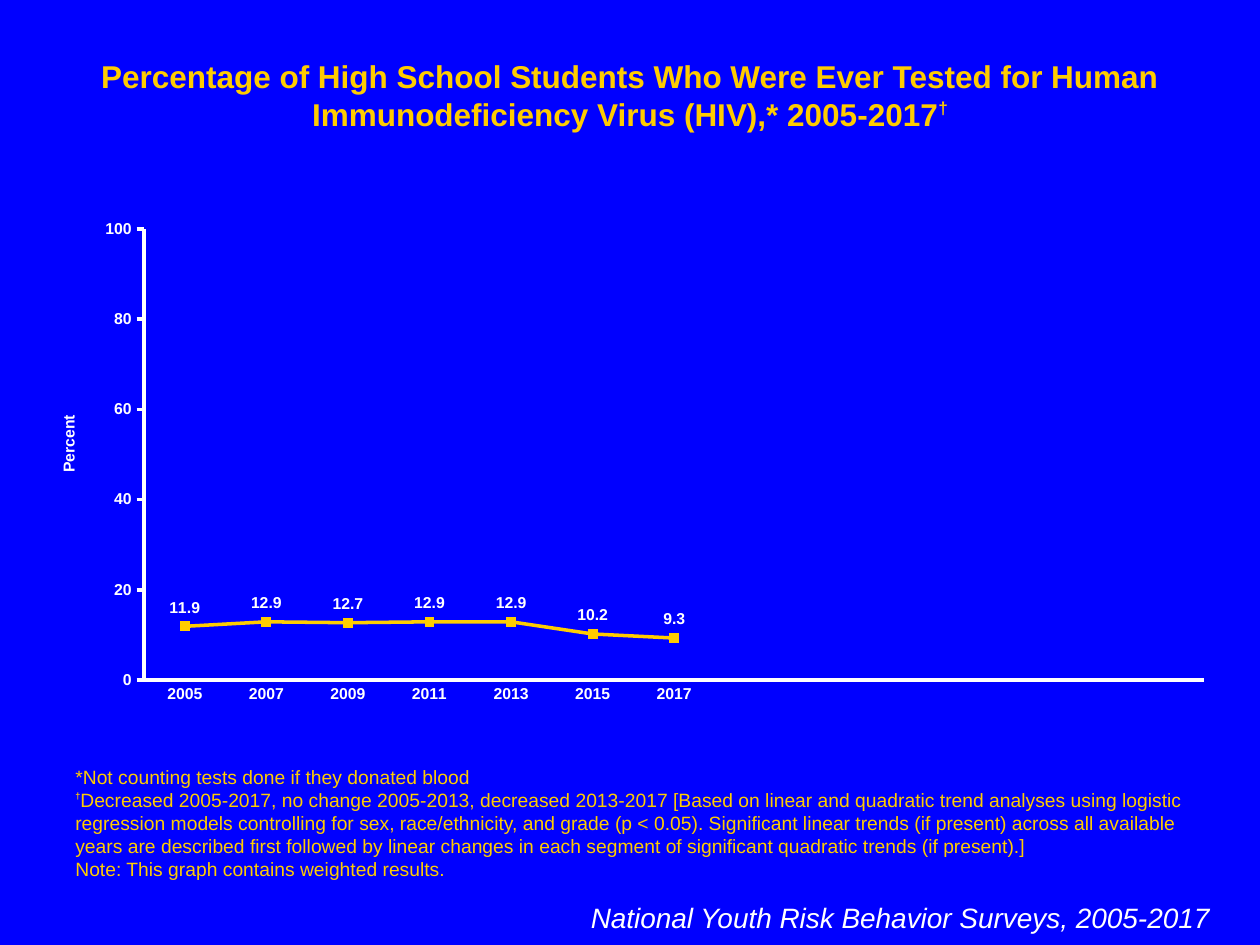
from dataclasses import dataclass

import pptx
import pptx.chart.data
import pptx.dml.color
import pptx.enum.chart
import pptx.enum.text
import pptx.oxml
import pptx.oxml.ns
import pptx.util
from pptx.util import Inches

qn = pptx.oxml.ns.qn
Align = pptx.enum.text.PP_ALIGN
Anchor = pptx.enum.text.MSO_ANCHOR


@dataclass(frozen=True)
class Theme:
    font: str = "Arial"
    blue: str = "0000FF"
    gold: str = "FFCC00"
    white: str = "FFFFFF"
    title: int = 18
    title_mark: int = 17
    note: int = 11
    note_mark: int = 9
    source: int = 16
    chart: int = 9
    line: int = 2


THEME = Theme()
YEARS = [str(year) for year in range(2005, 2018, 2)]
TESTED = [11.9, 12.9, 12.7, 12.9, 12.9, 10.2, 9.3]
SLOTS = 13  # categories on the axis, the last ones left empty


def rgb(value):
    return pptx.dml.color.RGBColor.from_string(value)


def style_font(font, size, color, bold=False, italic=False):
    font.name = THEME.font
    font.size = pptx.util.Pt(size)
    font.color.rgb = rgb(color)
    font.bold = bold
    font.italic = italic


def add_run(paragraph, text, size, color, raised=0, **style):
    """Add a run; raised is the superscript offset in percent."""
    run = paragraph.add_run()
    run.text = text
    style_font(run.font, size, color, **style)
    if raised:
        run.font._element.set("baseline", str(raised * 1000))


def prepare_frame(shape, anchor=Anchor.TOP):
    frame = shape.text_frame
    frame.word_wrap = True
    frame.auto_size = pptx.enum.text.MSO_AUTO_SIZE.SHAPE_TO_FIT_TEXT
    frame.vertical_anchor = anchor
    return frame


def add_title(slide):
    title = slide.shapes.title
    title.left, title.top = Inches(0.5), Inches(0.4)
    title.width, title.height = Inches(9), Inches(0.4)
    heading = prepare_frame(title).paragraphs[0]
    heading.alignment = Align.CENTER
    add_run(heading, "Percentage of High School Students Who Were Ever Tested for Human "
            "Immunodeficiency Virus (HIV),* 2005-2017", THEME.title, THEME.gold, bold=True)
    add_run(heading, "†", THEME.title_mark, THEME.gold, raised=40, bold=True)


def add_footnotes(slide):
    box = slide.shapes.add_textbox(Inches(0.5), Inches(6.75), Inches(9), Inches(0.29))
    frame = prepare_frame(box, Anchor.BOTTOM)
    exclusion, trend, weighting = (
        frame.paragraphs[0], frame.add_paragraph(), frame.add_paragraph())
    add_run(exclusion, "*Not counting tests done if they donated blood", THEME.note, THEME.gold)
    add_run(trend, "†", THEME.note_mark, THEME.gold, raised=50, bold=True)
    add_run(trend, "Decreased 2005-2017, no change 2005-2013, decreased 2013-2017 [Based on "
            "linear and quadratic trend analyses using logistic regression models controlling "
            "for sex, race/ethnicity, and grade (p < 0.05). Significant linear trends (if "
            "present) across all available years are described first followed by linear changes "
            "in each segment of significant quadratic trends (if present).]",
            THEME.note, THEME.gold)
    add_run(weighting, "Note: This graph contains weighted results.", THEME.note, THEME.gold)


def add_source(slide):
    box = slide.shapes.add_textbox(Inches(4.53), Inches(7.1), Inches(5.17), Inches(0.37))
    survey = prepare_frame(box).paragraphs[0]
    survey.alignment = Align.RIGHT
    add_run(survey, "National Youth Risk Behavior Surveys, 2005-2017",
            THEME.source, THEME.white, italic=True)


def place(element, index, target=None, **fractions):
    """Give a chart part a fixed place, as fractions of the chart's size."""
    for old in element.findall(qn("c:layout")):
        element.remove(old)
    layout = pptx.oxml.parse_xml(f"<c:layout {pptx.oxml.ns.nsdecls('c')}><c:manualLayout/></c:layout>")
    settings = {"layoutTarget": target} if target else {}
    settings.update(xMode="edge", yMode="edge", **fractions)
    for tag, value in settings.items():
        child = layout[0].makeelement(qn(f"c:{tag}"), {"val": str(value)})
        layout[0].append(child)
    element.insert(index, layout)


def style_axis(axis, tick):
    axis.has_major_gridlines = False
    axis.major_tick_mark = tick
    axis.minor_tick_mark = pptx.enum.chart.XL_TICK_MARK.NONE
    axis.format.line.color.rgb = rgb(THEME.white)
    axis.format.line.width = pptx.util.Pt(THEME.line)
    style_font(axis.tick_labels.font, THEME.chart, THEME.white, bold=True)


def style_percent_axis(axis):
    style_axis(axis, pptx.enum.chart.XL_TICK_MARK.OUTSIDE)
    axis.minimum_scale, axis.maximum_scale, axis.major_unit = 0, 100, 20
    axis.tick_labels.number_format = "#,##0"
    axis.tick_labels.number_format_is_linked = False
    frame = axis.axis_title.text_frame
    frame._txBody.bodyPr.set("rot", "-5400000")
    frame._txBody.bodyPr.set("vert", "horz")
    add_run(frame.paragraphs[0], "Percent", THEME.chart, THEME.white, bold=True)
    place(axis.axis_title._element, 1, x=0.02, y=0.4)


def style_series(series):
    series.smooth = False
    series.format.line.color.rgb = rgb(THEME.gold)
    series.format.line.width = pptx.util.Pt(THEME.line)
    marker = series.marker
    marker.style = pptx.enum.chart.XL_MARKER_STYLE.SQUARE
    marker.size = 5
    marker.format.fill.solid()
    marker.format.fill.fore_color.rgb = rgb(THEME.gold)
    marker.format.line.color.rgb = rgb(THEME.gold)
    labels = series.data_labels
    labels.show_value = True
    labels.position = pptx.enum.chart.XL_LABEL_POSITION.ABOVE
    labels.number_format = "#,##0.0"
    labels.number_format_is_linked = False
    style_font(labels.font, THEME.chart, THEME.white, bold=True)


def add_trend_chart(slide):
    empty = SLOTS - len(YEARS)
    data = pptx.chart.data.CategoryChartData()
    data.categories = YEARS + [""] * empty
    data.add_series("Series 1", TESTED + [None] * empty)
    chart = slide.shapes.add_chart(
        pptx.enum.chart.XL_CHART_TYPE.LINE_MARKERS,
        Inches(0.25), Inches(1.67), Inches(9.5), Inches(4), data).chart
    chart.has_title = False
    chart.has_legend = False
    style_font(chart.font, 18, THEME.white)
    style_axis(chart.category_axis, pptx.enum.chart.XL_TICK_MARK.NONE)
    style_percent_axis(chart.value_axis)
    plot = chart.plots[0]
    plot.vary_by_categories = False
    style_series(plot.series[0])
    plot_area = chart._chartSpace.chart.plotArea
    place(plot_area, 0, "inner", x=0.094, y=0.037, w=0.886, h=0.895)


def main():
    deck = pptx.Presentation()
    deck.slide_width, deck.slide_height = Inches(10), Inches(7.5)
    title_only = deck.slide_layouts[5]
    slide = deck.slides.add_slide(title_only)
    slide.background.fill.solid()
    slide.background.fill.fore_color.rgb = rgb(THEME.blue)
    add_title(slide)
    add_footnotes(slide)
    add_source(slide)
    add_trend_chart(slide)
    deck.save("out.pptx")


if __name__ == "__main__":
    main()
